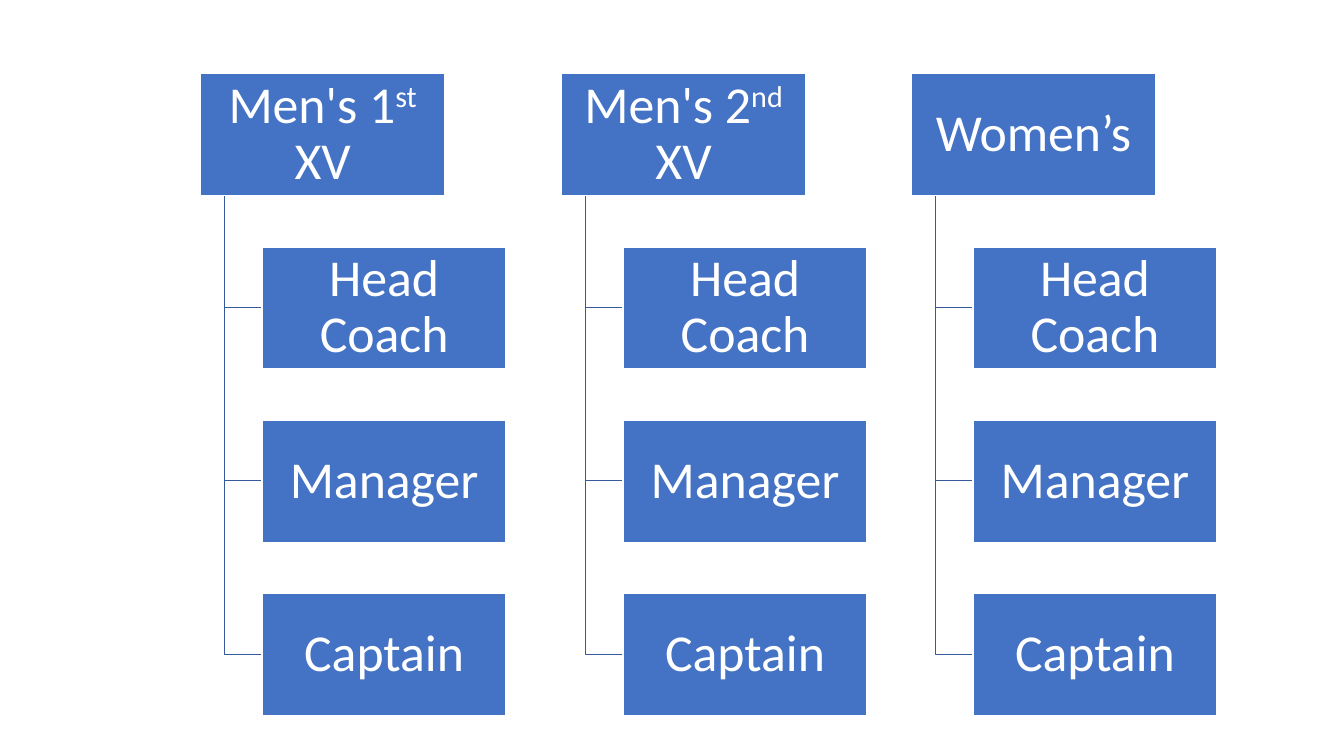
from pptx import Presentation
from pptx.dml.color import RGBColor
from pptx.enum.shapes import MSO_SHAPE as SHAPE
from pptx.enum.text import MSO_ANCHOR as ANCHOR, PP_ALIGN as ALIGN
from pptx.util import Pt

PX = 9144  # EMU per px, 100 px to the inch
BOX_W, BOX_H = 242, 121
TOP, ROW_STEP = 73, 172
ROLE_INDENT, TRUNK_INDENT = 61, 24
INSET = 3

BLUE, LINE_BLUE, WHITE = "4472C4", "365B9D", "FFFFFF"

# Left edge of each team, and its name as (text, is superscript) runs
TEAMS = [
    (199, [("Men's 1", False), ("st", True), (" XV", False)]),
    (557, [("Men's 2", False), ("nd", True), (" XV", False)]),
    (904, [("Women’s", False)]),
]
ROLES = ["Head Coach", "Manager", "Captain"]


def color(hex_code):
    return RGBColor.from_string(hex_code)


def row_top(row):
    return TOP + row * ROW_STEP


def write(paragraph, text, size=37, font="Calibri", fill=WHITE, superscript=False):
    run = paragraph.add_run()
    run.text = text
    run.font.size = Pt(size)
    run.font.name = font
    run.font.color.rgb = color(fill)
    if superscript:
        run.font._element.set("baseline", "30000")


def add_box(shapes, left, top, label):
    box = shapes.add_shape(SHAPE.RECTANGLE, left * PX, top * PX, BOX_W * PX, BOX_H * PX)
    box.shadow.inherit = False
    box.fill.solid()
    box.fill.fore_color.rgb = color(BLUE)
    box.line.color.rgb = color(WHITE)
    box.line.width = Pt(1)

    frame = box.text_frame
    frame.word_wrap = True
    frame.vertical_anchor = ANCHOR.MIDDLE
    frame.margin_left = frame.margin_right = INSET * PX
    frame.margin_top = frame.margin_bottom = INSET * PX
    paragraph = frame.paragraphs[0]
    paragraph.alignment = ALIGN.CENTER
    paragraph.line_spacing = 0.9
    for text, superscript in label:
        write(paragraph, text, superscript=superscript)


def add_branch(shapes, left, row):
    """Line down from the team box, then right to the role box."""
    trunk = left + TRUNK_INDENT
    role_middle = row_top(row) + BOX_H // 2
    outline = shapes.build_freeform(trunk, TOP + BOX_H, scale=PX)
    outline.add_line_segments(
        [(trunk, role_middle), (left + ROLE_INDENT, role_middle)], close=False
    )
    branch = outline.convert_to_shape()
    branch.shadow.inherit = False
    branch.fill.background()
    branch.line.color.rgb = color(LINE_BLUE)
    branch.line.width = Pt(1)


def add_team(slide, left, name):
    shapes = slide.shapes.add_group_shape().shapes
    # Branches lie behind the boxes
    for row in range(len(ROLES), 0, -1):
        add_branch(shapes, left, row)
    add_box(shapes, left, TOP, name)
    for row, role in enumerate(ROLES, start=1):
        add_box(shapes, left + ROLE_INDENT, row_top(row), [(role, False)])


def main():
    deck = Presentation()
    deck.slide_width, deck.slide_height = 1333 * PX, 750 * PX
    slide = deck.slides.add_slide(deck.slide_layouts[6])
    for left, name in TEAMS:
        add_team(slide, left, name)
    deck.save("out.pptx")


if __name__ == "__main__":
    main()
